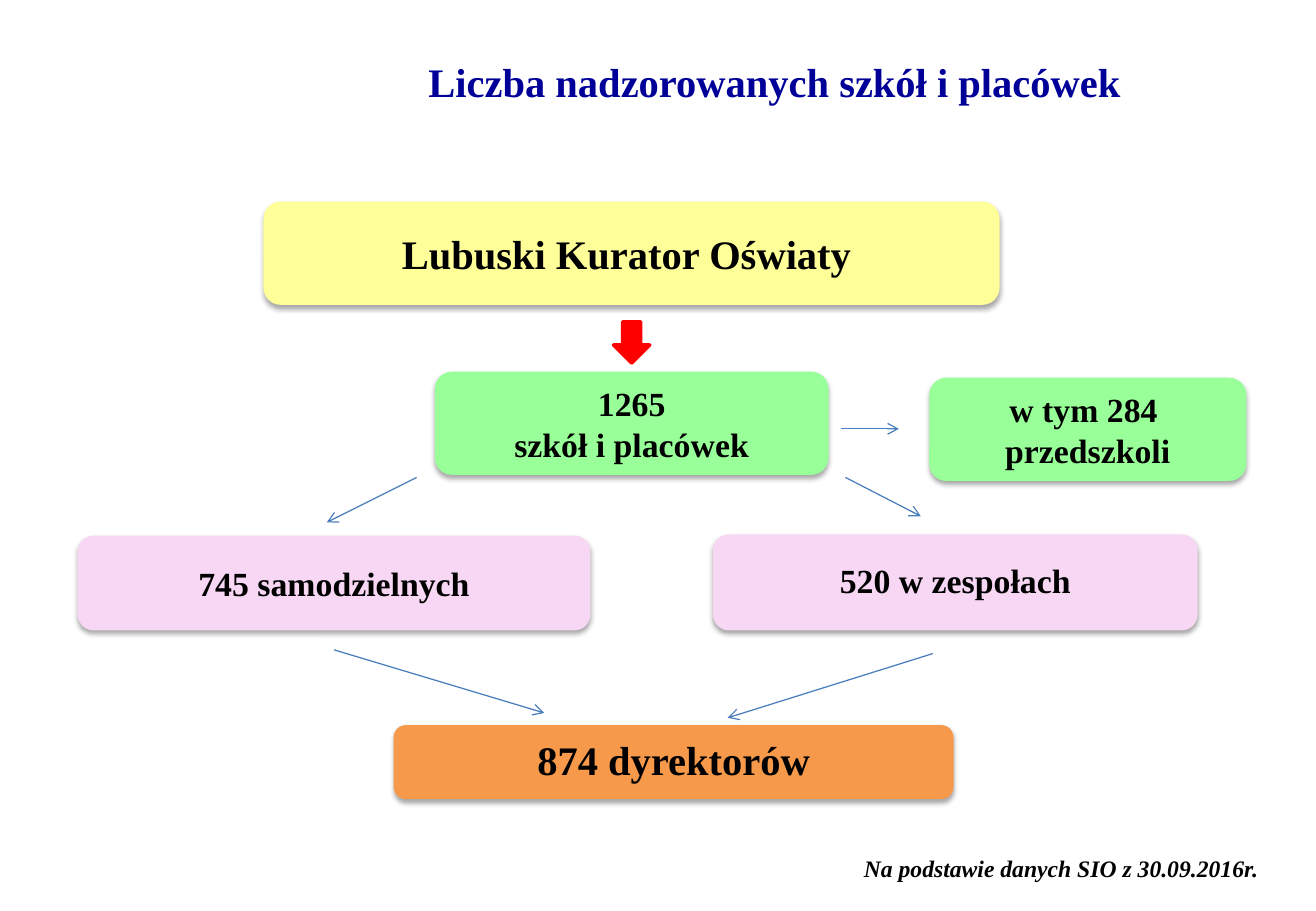
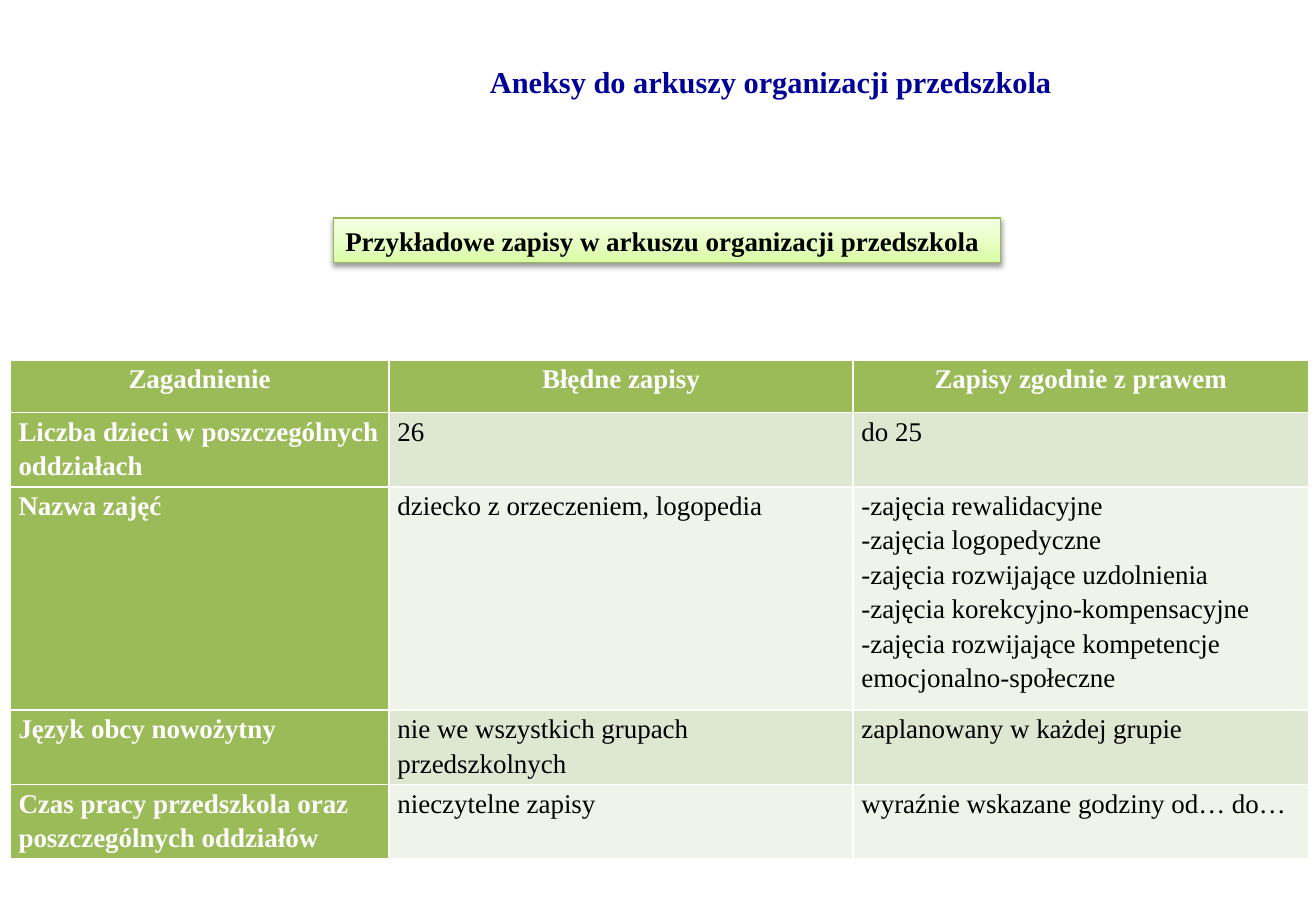
from lxml import etree
from pptx import Presentation
from pptx.dml.color import RGBColor
from pptx.enum.shapes import MSO_CONNECTOR, MSO_SHAPE
from pptx.enum.text import MSO_ANCHOR, PP_ALIGN
from pptx.oxml.ns import qn
from pptx.util import Pt

ROUNDED = MSO_SHAPE.ROUNDED_RECTANGLE
RECTANGLE = MSO_SHAPE.RECTANGLE
DOWN_ARROW = MSO_SHAPE.DOWN_ARROW
STRAIGHT = MSO_CONNECTOR.STRAIGHT
LEFT, CENTER, RIGHT = PP_ALIGN.LEFT, PP_ALIGN.CENTER, PP_ALIGN.RIGHT
TOP, MIDDLE = MSO_ANCHOR.TOP, MSO_ANCHOR.MIDDLE

FONT = "Times New Roman"
BLACK, WHITE, NAVY, RED = "000000", "FFFFFF", "000099", "FF0000"
YELLOW, MINT, PINK, ORANGE = "FFFF99", "99FF99", "F7D7F3", "F7994B"
ARROW_BLUE = "4B7EBC"
OLIVE, OLIVE_LINE = "9BBB59", "98B955"
BANDS = ("DEE7D1", "EFF3EA")
LABEL_BOTTOM, LABEL_TOP = "DAFDA7", "F5FFE7"


def color(value):
    return RGBColor.from_string(value)


class Slides:
    def __init__(self):
        self.deck = Presentation()
        self.deck.slide_width, self.deck.slide_height = Pt(780), Pt(540)
        self.page = None

    def add_page(self, title, size):
        self.page = self.deck.slides.add_slide(self.deck.slide_layouts[6])
        self.text(title, (152.6, 11.5, 613, 73.4), size, NAVY, CENTER, MIDDLE)

    def set_text(self, frame, text, size, ink, align, bold=True, italic=False,
                 spacing=1, after=0):
        frame.word_wrap = True
        frame.text = text
        for para in frame.paragraphs:
            para.alignment = align
            para.line_spacing = spacing
            para.space_after = Pt(after)
            for span in para.runs:
                font = span.font
                font.name, font.size = FONT, Pt(size)
                font.bold, font.italic = bold, italic
                font.color.rgb = color(ink)

    def text(self, text, place, size, ink, align, anchor=TOP, italic=False):
        box = self.page.shapes.add_textbox(*map(Pt, place))
        box.text_frame.vertical_anchor = anchor
        self.set_text(box.text_frame, text, size, ink, align, italic=italic)

    def shape(self, kind, place, fill):
        shape = self.page.shapes.add_shape(kind, *map(Pt, place))
        shape.shadow.inherit = False
        shape.fill.solid()
        shape.fill.fore_color.rgb = color(fill)
        shape.line.fill.background()
        return shape

    def outline(self, shape, ink, width):
        shape.line.color.rgb = color(ink)
        shape.line.width = Pt(width)

    def drop_shadow(self, shape, opacity=35, blur=3.1, distance=1.8):
        effects = shape.element.spPr.find(qn("a:effectLst"))
        shadow = etree.SubElement(
            effects, qn("a:outerShdw"), blurRad=str(Pt(blur)),
            dist=str(Pt(distance)), dir="5400000", rotWithShape="0")
        tint = etree.SubElement(shadow, qn("a:srgbClr"), val=BLACK)
        etree.SubElement(tint, qn("a:alpha"), val=str(opacity * 1000))

    def node(self, text, place, fill, size=20, spacing=1):
        node = self.shape(ROUNDED, place, fill)
        self.drop_shadow(node)
        node.text_frame.vertical_anchor = MIDDLE
        self.set_text(node.text_frame, text, size, BLACK, CENTER, spacing=spacing)

    def block_arrow(self, place):
        self.outline(self.shape(DOWN_ARROW, place, RED), RED, 2)

    def arrow(self, start, end):
        line = self.page.shapes.add_connector(STRAIGHT, *map(Pt, start + end))
        self.outline(line, ARROW_BLUE, 0.75)
        properties = line.element.spPr
        etree.SubElement(properties.find(qn("a:ln")), qn("a:tailEnd"), type="arrow")
        etree.SubElement(properties, qn("a:effectLst"))

    def label(self, text, place):
        label = self.shape(RECTANGLE, place, LABEL_BOTTOM)
        label.fill.gradient()
        label.fill.gradient_angle = 90
        for stop, tint in zip(label.fill.gradient_stops, (LABEL_BOTTOM, LABEL_TOP)):
            stop.color.rgb = color(tint)
        self.outline(label, OLIVE_LINE, 0.75)
        self.drop_shadow(label, opacity=38, distance=1.6)
        label.text_frame.vertical_anchor = MIDDLE
        self.set_text(label.text_frame, text, 16, BLACK, LEFT)

    def table(self, rows, left, top, widths, heights):
        frame = self.page.shapes.add_table(
            len(rows), len(widths), Pt(left), Pt(top),
            Pt(sum(widths)), Pt(sum(heights)))
        table = frame.table
        table.first_col = True
        for column, width in zip(table.columns, widths):
            column.width = Pt(width)
        for row, height in zip(table.rows, heights):
            row.height = Pt(height)
        for r, texts in enumerate(rows):
            for c, text in enumerate(texts):
                cell = table.cell(r, c)
                cell.margin_left = cell.margin_right = Pt(5)
                cell.margin_top = cell.margin_bottom = 0
                heading = r == 0 or c == 0
                cell.fill.solid()
                cell.fill.fore_color.rgb = color(OLIVE if heading else BANDS[(r - 1) % 2])
                self.set_text(cell.text_frame, text, 16, WHITE if heading else BLACK,
                              CENTER if r == 0 else LEFT, bold=heading, spacing=1.15,
                              after=0 if "\n" in text else 10)


def schools_page(slides):
    slides.add_page("Liczba nadzorowanych szkół i placówek", 24)
    slides.node("Lubuski Kurator Oświaty ", (156.2, 119.5, 436.3, 61.2), YELLOW, 24)
    slides.block_arrow((363.6, 190.8, 21.6, 24.5))
    slides.node("1265\nszkół i placówek", (257.8, 220.3, 233.3, 61.2), MINT)
    slides.node("w tym 284 \nprzedszkoli", (550.8, 223.9, 187.9, 61.2), MINT)
    slides.node("745 samodzielnych", (46.1, 317.5, 303.8, 56.2), PINK)
    slides.node("520 w zespołach", (422.6, 316.8, 287.3, 56.9), PINK, spacing=0.9)
    slides.node("874 dyrektorów", (233.3, 429.8, 331.9, 43.9), ORANGE, 24, 0.9)
    for start, end in (
        ((498.2, 254.2), (532.8, 254.2)),
        ((247, 283), (193.7, 309.6)),
        ((501.1, 283), (545.8, 306)),
        ((198, 385.2), (322.6, 422.6)),
        ((553, 387.4), (431.3, 425.5)),
    ):
        slides.arrow(start, end)
    slides.text("Na podstawie danych SIO z 30.09.2016r.", (501.1, 502.6, 252, 24.5),
                14, BLACK, RIGHT, italic=True)


def annexes_page(slides):
    slides.add_page("Aneksy do arkuszy organizacji przedszkola ", 18)
    slides.label("Przykładowe zapisy w arkuszu organizacji przedszkola",
                 (197.6, 129.2, 395.3, 26.6))
    activities = "\n".join((
        "-zajęcia rewalidacyjne",
        "-zajęcia logopedyczne",
        "-zajęcia rozwijające uzdolnienia",
        "-zajęcia korekcyjno-kompensacyjne",
        "-zajęcia rozwijające kompetencje emocjonalno-społeczne",
    ))
    rows = (
        ("Zagadnienie", "Błędne zapisy", "Zapisy zgodnie z prawem"),
        ("Liczba dzieci w poszczególnych oddziałach", "26", "do 25"),
        ("Nazwa zajęć", "dziecko z orzeczeniem, logopedia", activities),
        ("Język obcy nowożytny", "nie we wszystkich grupach przedszkolnych",
         "zaplanowany w każdej grupie"),
        ("Czas pracy przedszkola oraz poszczególnych oddziałów",
         "nieczytelne zapisy", "wyraźnie wskazane godziny od… do…"),
    )
    slides.table(rows, 6, 213.5, (224.6, 275, 270), (31, 40.5, 122.5, 41, 41))


def main():
    slides = Slides()
    schools_page(slides)
    annexes_page(slides)
    slides.deck.save("out.pptx")


if __name__ == "__main__":
    main()
